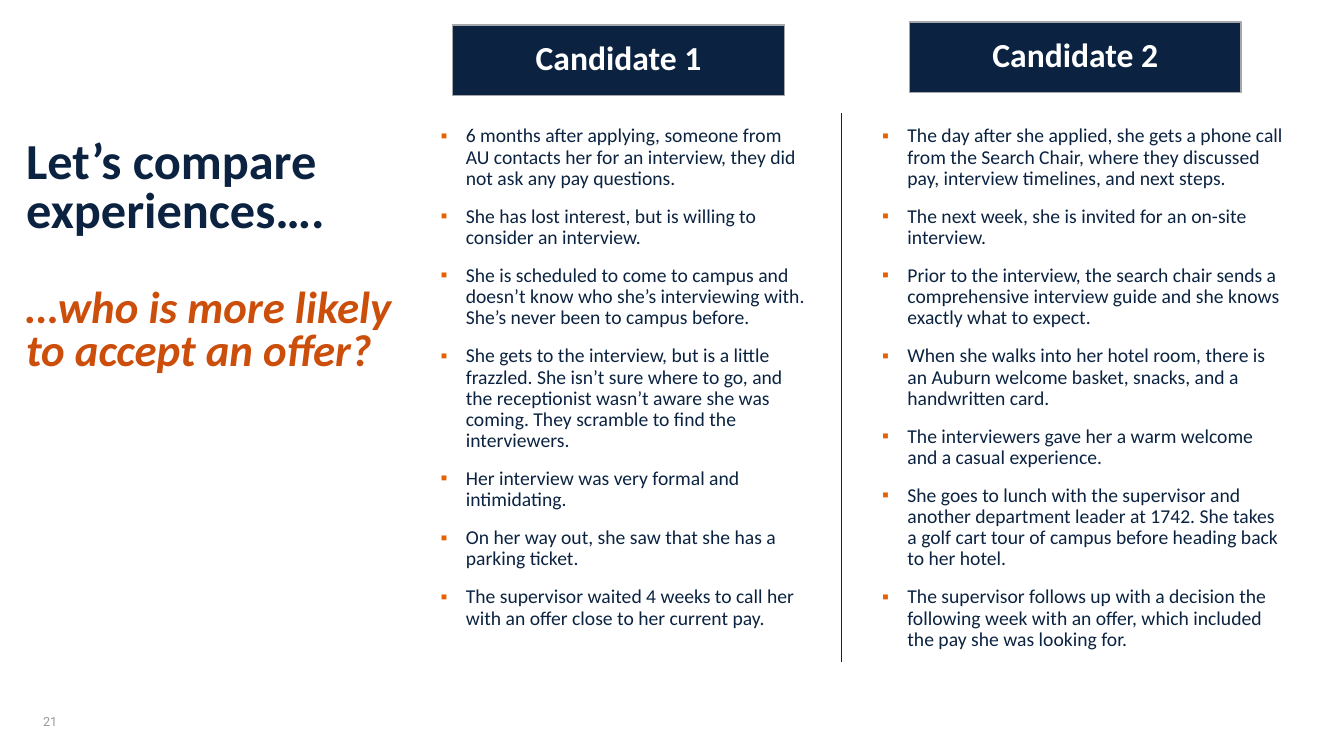
from lxml.etree import SubElement
from pptx import Presentation
from pptx.dml.color import RGBColor
from pptx.enum.shapes import MSO_CONNECTOR as Link, MSO_SHAPE as Shape
from pptx.enum.text import MSO_ANCHOR as Anchor, MSO_AUTO_SIZE as Fit, PP_ALIGN as Align
from pptx.oxml.ns import qn
from pptx.util import Inches, Pt

NAVY = RGBColor(0x0B, 0x23, 0x41)
ORANGE = RGBColor(0xE8, 0x61, 0x00)
RUST = RGBColor(0xCC, 0x4E, 0x0B)
SILVER = RGBColor(0xA5, 0xA7, 0xAA)
GRAY = RGBColor(0x99, 0x99, 0x99)
WHITE = RGBColor(0xFF, 0xFF, 0xFF)

FIRST = [
    "6 months after applying, someone from AU contacts her for an interview, they did not ask any pay questions.",
    "She has lost interest, but is willing to consider an interview.",
    "She is scheduled to come to campus and doesn’t know who she’s interviewing with. She’s never been to campus before.",
    "She gets to the interview, but is a little frazzled. She isn’t sure where to go, and the receptionist wasn’t aware she was coming. They scramble to find the interviewers.",
    "Her interview was very formal and intimidating.",
    "On her way out, she saw that she has a parking ticket.",
    "The supervisor waited 4 weeks to call her with an offer close to her current pay.",
]
SECOND = [
    "The day after she applied, she gets a phone call from the Search Chair, where they discussed pay, interview timelines, and next steps.",
    "The next week, she is invited for an on-site interview.",
    "Prior to the interview, the search chair sends a comprehensive interview guide and she knows exactly what to expect.",
    "When she walks into her hotel room, there is an Auburn welcome basket, snacks, and a handwritten card.",
    "The interviewers gave her a warm welcome and a casual experience.",
    "She goes to lunch with the supervisor and another department leader at 1742. She takes a golf cart tour of campus before heading back to her hotel.",
    "The supervisor follows up with a decision the following week with an offer, which included the pay she was looking for.",
]


def place(shape, box):
    shape.left, shape.top, shape.width, shape.height = map(Inches, box)


def style(para, size, color, bold=False, italic=False, face="Calibri"):
    font = para.font
    font.name, font.size = face, Pt(size)
    font.bold, font.italic = bold, italic
    font.color.rgb = color


def write(frame, lines, align, anchor, space):
    frame.word_wrap = True
    frame.auto_size = Fit.NONE
    frame.vertical_anchor = anchor
    frame.text = "\n".join(lines)
    for para in frame.paragraphs:
        para.alignment = align
        para.line_spacing = space
        para.space_before = Pt(0)
    return frame.paragraphs


def add_mark(para):
    props = para._p.get_or_add_pPr()
    props.set("marL", str(Inches(0.25)))
    props.set("indent", str(-Inches(0.25)))
    tint = SubElement(props, qn("a:buClr"))
    SubElement(tint, qn("a:srgbClr"), val=str(ORANGE))
    SubElement(props, qn("a:buFont"), typeface="Arial")
    SubElement(props, qn("a:buChar"), char="▪")


def fill_list(holder, box, lines):
    place(holder, box)
    for para in write(holder.text_frame, lines, Align.LEFT, Anchor.TOP, 0.9):
        para.space_after = Pt(12)
        add_mark(para)
        style(para, 14, NAVY)


def add_label(slide, box, text):
    label = slide.shapes.add_shape(Shape.RECTANGLE, *map(Inches, box))
    label.shadow.inherit = False
    label.fill.solid()
    label.fill.fore_color.rgb = NAVY
    label.line.color.rgb = SILVER
    label.line.width = Pt(1)
    for para in write(label.text_frame, [text], Align.CENTER, Anchor.MIDDLE, 0.8):
        style(para, 24, WHITE, bold=True)


def add_heads(slide, box):
    left, top, width, height = box
    title = slide.shapes.title
    place(title, (left, top, width, height))
    lines = ["Let’s compare", "experiences…."]
    for para in write(title.text_frame, lines, Align.LEFT, Anchor.TOP, 0.8):
        style(para, 36, NAVY, bold=True)
    ask = slide.shapes.add_textbox(*map(Inches, (left, top + 1.47, width, height)))
    lines = ["…who is more likely", "to accept an offer?"]
    for para in write(ask.text_frame, lines, Align.LEFT, Anchor.TOP, 0.8):
        style(para, 32, RUST, bold=True, italic=True)


def add_rule(slide, left, top, height):
    ends = map(Inches, (left, top, left, top + height))
    rule = slide.shapes.add_connector(Link.STRAIGHT, *ends)
    rule.line.color.rgb = NAVY
    rule.line.width = Pt(0.5)
    SubElement(rule._element.spPr, qn("a:effectLst"))


def add_number(slide, box, text):
    number = slide.shapes.add_textbox(*map(Inches, box))
    for para in write(number.text_frame, [text], Align.LEFT, Anchor.MIDDLE, 1.0):
        style(para, 9, GRAY, face="Roboto")


def main():
    deck = Presentation()
    deck.slide_width, deck.slide_height = Inches(13.33), Inches(7.5)
    slide = deck.slides.add_slide(deck.slide_layouts[3])
    add_heads(slide, (0.16, 1.35, 11.62, 0.73))
    fill_list(slide.placeholders[1], (4.27, 1.2, 3.86, 5.46), FIRST)
    fill_list(slide.placeholders[2], (8.65, 1.2, 4.21, 5.46), SECOND)
    add_label(slide, (4.49, 0.25, 3.29, 0.7), "Candidate 1")
    add_label(slide, (9.02, 0.22, 3.29, 0.7), "Candidate 2")
    add_rule(slide, 8.34, 1.12, 5.45)
    add_number(slide, (0.33, 6.96, 0.43, 0.4), "21")
    deck.save("out.pptx")


if __name__ == "__main__":
    main()
